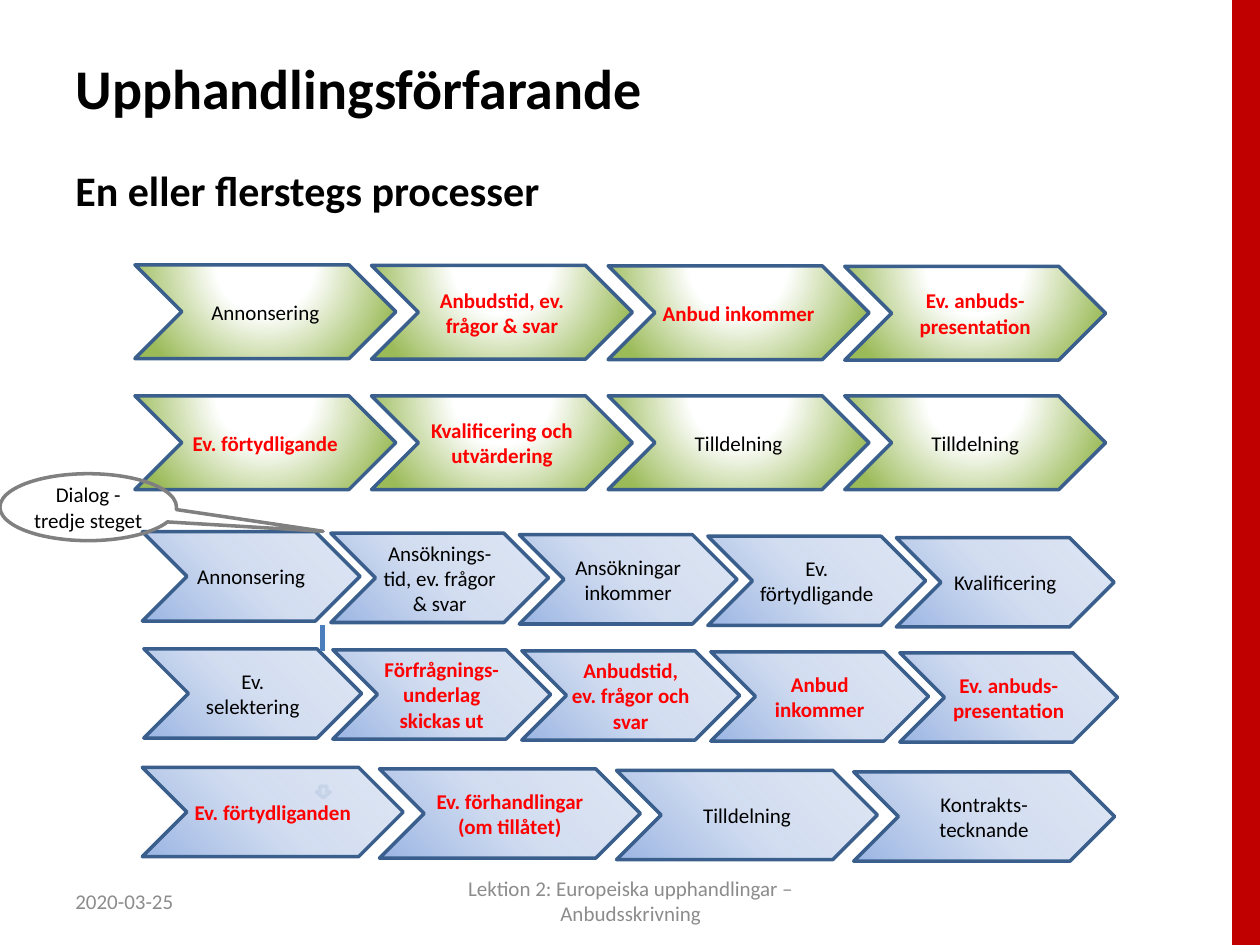
"""Build a slide that compares one-step and multi-step procurement processes."""
from pptx import Presentation
from pptx.dml.color import RGBColor
from pptx.enum.shapes import MSO_CONNECTOR, MSO_SHAPE
from pptx.enum.text import MSO_ANCHOR, PP_ALIGN
from pptx.oxml import parse_xml
from pptx.oxml.ns import nsdecls, qn
from pptx.util import Cm, Pt

BLACK = RGBColor(0x00, 0x00, 0x00)
RED = RGBColor(0xFF, 0x00, 0x00)
BAR_RED = RGBColor(0xC0, 0x00, 0x00)
GREY = RGBColor(0x8C, 0x8C, 0x8C)
CALLOUT_GREY = RGBColor(0x80, 0x80, 0x80)
OUTLINE = RGBColor(0x3A, 0x5F, 0x8C)
LINK_BLUE = RGBColor(0x4B, 0x7E, 0xBC)
WHITE = RGBColor(0xFF, 0xFF, 0xFF)
LEAF = RGBColor(0x9B, 0xBB, 0x59)
BLUE_DARK = RGBColor(0x9A, 0xB5, 0xE4)
BLUE_MID = RGBColor(0xCB, 0xD8, 0xEF)
BLUE_LIGHT = RGBColor(0xE1, 0xE8, 0xF5)

GREEN_GRADIENT = (((0, WHITE, 100), (35, WHITE, 100), (100, LEAF, 100)),
                  (50, -80, 50, 180))
BLUE_GRADIENT = (((0, BLUE_DARK, 100), (48, BLUE_MID, 85), (100, BLUE_LIGHT, 100)),
                 (0, 100, 100, 0))

GREEN_ROWS = [
    (2.72, 5.34, 4.77, 0.01, 5.26, [
        ("Annonsering", BLACK), ("Anbudstid, ev. frågor & svar", RED),
        ("Anbud inkommer", RED), ("Ev. anbuds-presentation", RED)]),
    (2.72, 7.98, 4.77, 0, 5.26, [
        ("Ev. förtydligande", RED), ("Kvalificering och utvärdering", RED),
        ("Tilldelning", BLACK), ("Tilldelning", BLACK)]),
]
BLUE_ROWS = [
    (2.87, 10.72, 3.8, 0.03, 4.39, [
        ("Annonsering", BLACK), ("Ansöknings-tid, ev. frågor & svar", BLACK),
        ("Ansökningar inkommer", BLACK), ("Ev. förtydligande", BLACK),
        ("Kvalificering", BLACK)]),
    (2.9, 13.08, 3.81, 0.02, 4.39, [
        ("Ev. selektering", BLACK), ("Förfrågnings-underlag skickas ut", RED),
        ("Anbudstid, ev. frågor och svar", RED), ("Anbud inkommer", RED),
        ("Ev. anbuds-presentation", RED)]),
    (2.87, 15.47, 4.78, 0.03, 5.26, [
        ("Ev. förtydliganden", RED), ("Ev. förhandlingar (om tillåtet)", RED),
        ("Tilldelning", BLACK), ("Kontrakts-tecknande", BLACK)]),
]


class ProcessSlide:
    """Hold the style and the current slide."""

    font = "Calibri"

    def __init__(self, prs):
        self.s = prs.slides.add_slide(prs.slide_layouts[5])

    def add_run(self, tf, text, size=12, color=BLACK, bold=False,
                align=PP_ALIGN.CENTER, anchor=MSO_ANCHOR.MIDDLE):
        tf.word_wrap = True
        tf.vertical_anchor = anchor
        p = tf.paragraphs[0]
        p.alignment = align
        r = p.add_run()
        r.text = text
        r.font.name, r.font.size, r.font.bold = self.font, Pt(size), bold
        r.font.color.rgb = color

    def title(self, text, x, y, w, h):
        sp = self.s.shapes.title
        sp.left, sp.top, sp.width, sp.height = Cm(x), Cm(y), Cm(w), Cm(h)
        self.add_run(sp.text_frame, text, 32, bold=True, align=PP_ALIGN.LEFT)

    def text(self, text, x, y, w, h, **style):
        sp = self.s.shapes.add_textbox(Cm(x), Cm(y), Cm(w), Cm(h))
        self.add_run(sp.text_frame, text, **style)

    def shape(self, kind, x, y, w, h, line=None):
        sp = self.s.shapes.add_shape(kind, Cm(x), Cm(y), Cm(w), Cm(h))
        sp.shadow.inherit = False
        if line is None:
            sp.line.fill.background()
        else:
            sp.line.color.rgb = line
            sp.line.width = Pt(2)
        tf = sp.text_frame
        tf.margin_left = tf.margin_right = Cm(0.1)
        tf.margin_top = tf.margin_bottom = Cm(0.13)
        return sp

    def bar(self, x, y, w, h):
        sp = self.shape(MSO_SHAPE.RECTANGLE, x, y, w, h)
        sp.fill.solid()
        sp.fill.fore_color.rgb = BAR_RED

    def gradient_shape(self, kind, x, y, w, h, gradient):
        sp = self.shape(kind, x, y, w, h, OUTLINE)
        stops, (left, top, right, bottom) = gradient
        gs = "".join(
            f'<a:gs pos="{pos * 1000}"><a:srgbClr val="{color}">'
            f'<a:alpha val="{alpha * 1000}"/></a:srgbClr></a:gs>'
            for pos, color, alpha in stops)
        fill = parse_xml(
            f'<a:gradFill {nsdecls("a")} rotWithShape="1"><a:gsLst>{gs}</a:gsLst>'
            f'<a:path path="circle"><a:fillToRect l="{left * 1000}" t="{top * 1000}" '
            f'r="{right * 1000}" b="{bottom * 1000}"/></a:path></a:gradFill>')
        sp._element.spPr.find(qn("a:prstGeom")).addnext(fill)
        return sp

    def chevron_row(self, row, h, gradient):
        x, y, pitch, drop, w, steps = row
        for i, (text, color) in enumerate(steps):
            sp = self.gradient_shape(MSO_SHAPE.CHEVRON, x + i * pitch, y + i * drop,
                                     w, h, gradient)
            self.add_run(sp.text_frame, text, color=color, bold=color == RED)

    def callout(self, text, x, y, w, h, tip):
        sp = self.shape(MSO_SHAPE.OVAL_CALLOUT, x, y, w, h, CALLOUT_GREY)
        sp.fill.background()
        sp.adjustments[0], sp.adjustments[1] = tip
        self.add_run(sp.text_frame, text)

    def line(self, x1, y1, x2, y2):
        c = self.s.shapes.add_connector(MSO_CONNECTOR.STRAIGHT,
                                        Cm(x1), Cm(y1), Cm(x2), Cm(y2))
        c.line.color.rgb = LINK_BLUE
        c.line.width = Pt(3)
        c._element.spPr.append(parse_xml(f'<a:effectLst {nsdecls("a")}/>'))


def main():
    prs = Presentation()
    prs.slide_width, prs.slide_height = Cm(25.4), Cm(19.05)
    slide = ProcessSlide(prs)
    slide.bar(24.84, 0, 0.56, 19.05)
    slide.title("Upphandlingsförfarande", 1.27, 0.76, 22.86, 2.01)
    slide.text("En eller flerstegs processer", 1.27, 3.2, 22.86, 1.4, size=24,
               bold=True, align=PP_ALIGN.LEFT, anchor=MSO_ANCHOR.TOP)
    slide.text("2020-03-25", 1.27, 17.65, 5.92, 1.02, color=GREY, align=PP_ALIGN.LEFT)
    slide.text("Lektion 2: Europeiska upphandlingar – Anbudsskrivning",
               8.69, 17.65, 8.05, 1.02, color=GREY)
    for row in GREEN_ROWS:
        slide.chevron_row(row, 1.89, GREEN_GRADIENT)
    slide.gradient_shape(MSO_SHAPE.DOWN_ARROW, 6.38, 15.85, 0.28, 0.23, BLUE_GRADIENT)
    for row in BLUE_ROWS:
        slide.chevron_row(row, 1.8, BLUE_GRADIENT)
    slide.callout("Dialog - tredje steget", 0, 9.55, 3.56, 1.35, (1.33, 0.36))
    slide.line(6.5, 12.6, 6.5, 13.13)
    prs.save("out.pptx")


if __name__ == "__main__":
    main()
